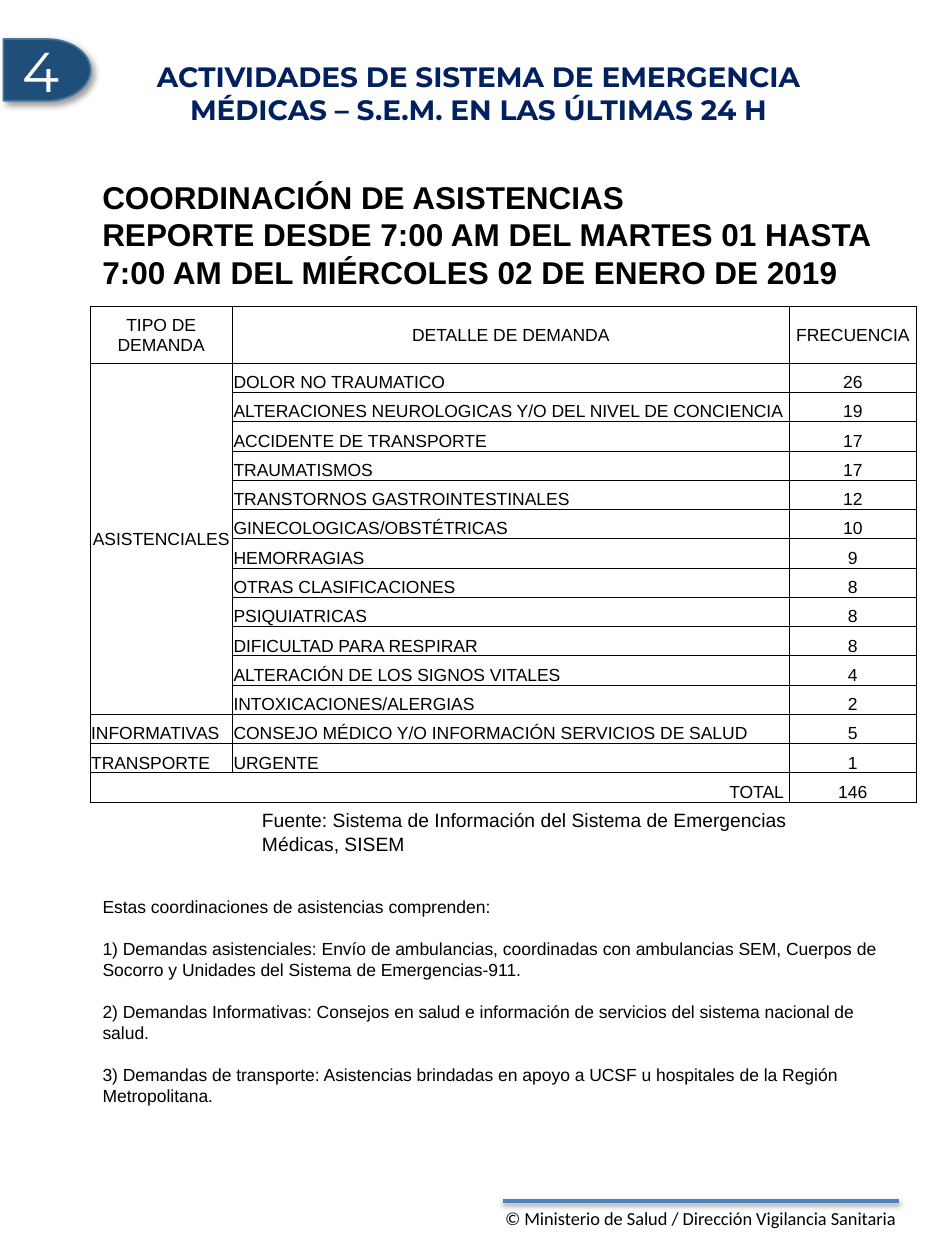
"""Build the daily medical emergency system report page."""
from pptx import Presentation
from pptx.dml.color import RGBColor
from pptx.enum.shapes import MSO_CONNECTOR, MSO_SHAPE
from pptx.enum.text import MSO_ANCHOR, MSO_AUTO_SIZE, PP_ALIGN
from pptx.oxml import parse_xml
from pptx.oxml.ns import nsdecls
from pptx.util import Pt

LEFT, CENTER, RIGHT = PP_ALIGN.LEFT, PP_ALIGN.CENTER, PP_ALIGN.RIGHT
MIDDLE, BOTTOM = MSO_ANCHOR.MIDDLE, MSO_ANCHOR.BOTTOM
FIXED = MSO_AUTO_SIZE.NONE
STRAIGHT = MSO_CONNECTOR.STRAIGHT
DELAY = MSO_SHAPE.FLOWCHART_DELAY

BLACK = RGBColor(0x00, 0x00, 0x00)
WHITE = RGBColor(0xFF, 0xFF, 0xFF)
NAVY = RGBColor(0x00, 0x20, 0x60)
BADGE_BLUE = RGBColor(0x1F, 0x4E, 0x79)
BADGE_EDGE = RGBColor(0x43, 0x73, 0x9E)
RULE_BLUE = RGBColor(0x4F, 0x81, 0xBD)

TITLE = "ACTIVIDADES DE SISTEMA DE EMERGENCIA MÉDICAS – S.E.M. EN LAS ÚLTIMAS 24 H"
HEADING = [
    "COORDINACIÓN DE ASISTENCIAS",
    "REPORTE DESDE 7:00 AM DEL MARTES 01 HASTA 7:00 AM DEL MIÉRCOLES 02 DE ENERO DE 2019",
]
SOURCE = "Fuente: Sistema de Información del Sistema de Emergencias Médicas, SISEM"
NOTES = [
    "Estas coordinaciones de asistencias comprenden:",
    "1) Demandas asistenciales: Envío de ambulancias, coordinadas con ambulancias SEM, "
    "Cuerpos de Socorro y Unidades del Sistema de Emergencias-911.",
    "2) Demandas Informativas: Consejos en salud e información de servicios del sistema "
    "nacional de salud.",
    "3) Demandas de transporte: Asistencias brindadas en apoyo a UCSF u hospitales de la "
    "Región Metropolitana.",
]
FOOTER = "© Ministerio de Salud / Dirección Vigilancia Sanitaria"

HEADER = ("TIPO DE DEMANDA", "DETALLE DE DEMANDA", "FRECUENCIA")
DEMANDS = [
    ("ASISTENCIALES", [
        ("DOLOR NO TRAUMATICO", 26),
        ("ALTERACIONES NEUROLOGICAS Y/O DEL NIVEL DE CONCIENCIA", 19),
        ("ACCIDENTE DE TRANSPORTE", 17),
        ("TRAUMATISMOS", 17),
        ("TRANSTORNOS GASTROINTESTINALES", 12),
        ("GINECOLOGICAS/OBSTÉTRICAS", 10),
        ("HEMORRAGIAS", 9),
        ("OTRAS CLASIFICACIONES", 8),
        ("PSIQUIATRICAS", 8),
        ("DIFICULTAD PARA RESPIRAR", 8),
        ("ALTERACIÓN DE LOS SIGNOS VITALES", 4),
        ("INTOXICACIONES/ALERGIAS", 2),
    ]),
    ("INFORMATIVAS", [("CONSEJO MÉDICO Y/O INFORMACIÓN SERVICIOS DE SALUD", 5)]),
    ("TRANSPORTE", [("URGENTE", 1)]),
]
COLUMN_WIDTHS = (81.4, 318.2, 72.7)
HEADER_HEIGHT, ROW_HEIGHT = 32.5, 16.75


class Report:
    """Hold the text style and the current page."""

    body_font = "Arial"
    cell_margins = {"margin_left": Pt(0.7), "margin_right": Pt(0.7),
                    "margin_top": Pt(0.7), "margin_bottom": Pt(0)}

    def __init__(self, page):
        self.page = page

    def set_lines(self, frame, lines, size, font=None, color=BLACK, bold=False,
                  align=LEFT, gap=0):
        frame.text = "\n".join(lines)
        font_values = {"name": font or self.body_font, "size": Pt(size), "bold": bold}
        para_values = {"alignment": align, "space_before": Pt(0), "space_after": Pt(gap)}
        for para in frame.paragraphs:
            for name, value in para_values.items():
                setattr(para, name, value)
            for span in para.runs:
                for name, value in font_values.items():
                    setattr(span.font, name, value)
                span.font.color.rgb = color

    def place(self, box, left, top, width, height):
        values = {"left": left, "top": top, "width": width, "height": height}
        for name, value in values.items():
            setattr(box, name, Pt(value))

    def title(self, text, bounds):
        box = self.page.shapes.title
        self.place(box, *bounds)
        frame = box.text_frame
        values = {"word_wrap": True, "auto_size": FIXED, "vertical_anchor": MIDDLE,
                  "margin_left": Pt(7.2), "margin_right": Pt(7.2),
                  "margin_top": Pt(7.2), "margin_bottom": Pt(7.2)}
        for name, value in values.items():
            setattr(frame, name, value)
        self.set_lines(frame, [text], 16, "Montserrat", NAVY, True, CENTER)

    def notes(self, lines, bounds):
        box = self.page.placeholders[1]
        self.place(box, *bounds)
        box.text_frame.auto_size = FIXED
        self.set_lines(box.text_frame, lines, 10, gap=12)
        for para in box.text_frame.paragraphs:
            properties = para._p.get_or_add_pPr()
            properties.set("marL", "0")
            properties.set("indent", "0")
            properties.append(parse_xml(f"<a:buNone {nsdecls('a')}/>"))

    def text(self, lines, bounds, size, wrap=True, **style):
        box = self.page.shapes.add_textbox(*map(Pt, bounds))
        box.text_frame.word_wrap = wrap
        self.set_lines(box.text_frame, lines, size, **style)

    def shadow(self, shape, alpha, blur, distance, angle):
        shape._element.spPr.append(parse_xml(
            f'<a:effectLst {nsdecls("a")}><a:outerShdw blurRad="{Pt(blur)}" '
            f'dist="{Pt(distance)}" dir="{angle * 60000}" rotWithShape="0">'
            f'<a:srgbClr val="{BLACK}"><a:alpha val="{alpha * 1000}"/></a:srgbClr>'
            '</a:outerShdw></a:effectLst>'))

    def badge(self, text, bounds):
        shape = self.page.shapes.add_shape(DELAY, *map(Pt, bounds))
        shape.fill.solid()
        shape.fill.fore_color.rgb = BADGE_BLUE
        shape.line.color.rgb = BADGE_EDGE
        shape.line.width = Pt(1)
        self.shadow(shape, 40, 4, 3, 45)
        shape.text_frame.vertical_anchor = MIDDLE
        self.set_lines(shape.text_frame, [text], 32, "Montserrat", WHITE, align=CENTER)

    def rule(self, left, right, height):
        line = self.page.shapes.add_connector(
            STRAIGHT, Pt(left), Pt(height), Pt(right), Pt(height))
        line.line.color.rgb = RULE_BLUE
        line.line.width = Pt(2)
        self.shadow(line, 38, 3.1, 1.6, 90)

    def cell(self, cell, text, align=LEFT, anchor=BOTTOM):
        self.set_lines(cell.text_frame, [text], 10, align=align)
        cell.vertical_anchor = anchor

    def borders(self, cell, **weights):
        cell.fill.background()
        properties = cell._tc.get_or_add_tcPr()
        for index, side in enumerate("LRTB"):
            properties.insert(index, parse_xml(
                f'<a:ln{side} {nsdecls("a")} w="{Pt(weights.get(side, 0.5))}">'
                f'<a:solidFill><a:srgbClr val="{BLACK}"/></a:solidFill></a:ln{side}>'))

    def table(self, left, top):
        count = sum(len(details) for _, details in DEMANDS) + 2
        height = HEADER_HEIGHT + ROW_HEIGHT * (count - 1)
        grid = self.page.shapes.add_table(
            count, 3, Pt(left), Pt(top), Pt(sum(COLUMN_WIDTHS)), Pt(height)).table
        grid.first_row = grid.horz_banding = False
        for column, width in zip(grid.columns, COLUMN_WIDTHS):
            column.width = Pt(width)
        for index, row in enumerate(grid.rows):
            row.height = Pt(ROW_HEIGHT if index else HEADER_HEIGHT)
        group_end = len(DEMANDS[0][1])
        heavy = {(1, 0): {"B": 1}, (group_end, 0): {"B": 1}, (group_end + 1, 0): {"T": 1}}
        for row in range(count):
            for column in range(3):
                cell = grid.cell(row, column)
                self.borders(cell, **heavy.get((row, column), {}))
                for name, value in self.cell_margins.items():
                    setattr(cell, name, value)
        for column, text in enumerate(HEADER):
            self.cell(grid.cell(0, column), text, CENTER, MIDDLE)
        row, total = 1, 0
        for kind, details in DEMANDS:
            first = grid.cell(row, 0)
            if len(details) > 1:
                first.merge(grid.cell(row + len(details) - 1, 0))
                self.cell(first, kind, CENTER, MIDDLE)
            else:
                self.cell(first, kind)
            for detail, frequency in details:
                self.cell(grid.cell(row, 1), detail)
                self.cell(grid.cell(row, 2), str(frequency), CENTER)
                row, total = row + 1, total + frequency
        grid.cell(row, 0).merge(grid.cell(row, 1))
        self.cell(grid.cell(row, 0), "TOTAL ", RIGHT)
        self.cell(grid.cell(row, 2), str(total), CENTER)


def main():
    """Create the deck and save it."""
    deck = Presentation()
    deck.slide_width, deck.slide_height = Pt(540), Pt(720)
    report = Report(deck.slides.add_slide(deck.slide_layouts[1]))
    report.rule(287.3, 514, 686.2)
    report.text([FOOTER], (281.5, 686.2, 242, 32.4), 10.5, wrap=False, font="Calibri")
    report.badge("4", (2, 22.3, 49.7, 35.3))
    report.title(TITLE, (55.4, 34.6, 436.3, 36.7))
    report.table(51.4, 175)
    report.text([SOURCE], (142.6, 458.6, 358.6, 20.9), 11)
    report.text(HEADING, (51.4, 98, 472.3, 94.3), 18, bold=True)
    report.notes(NOTES, (51.4, 508.3, 463.7, 130))
    deck.save("out.pptx")


if __name__ == "__main__":
    main()
